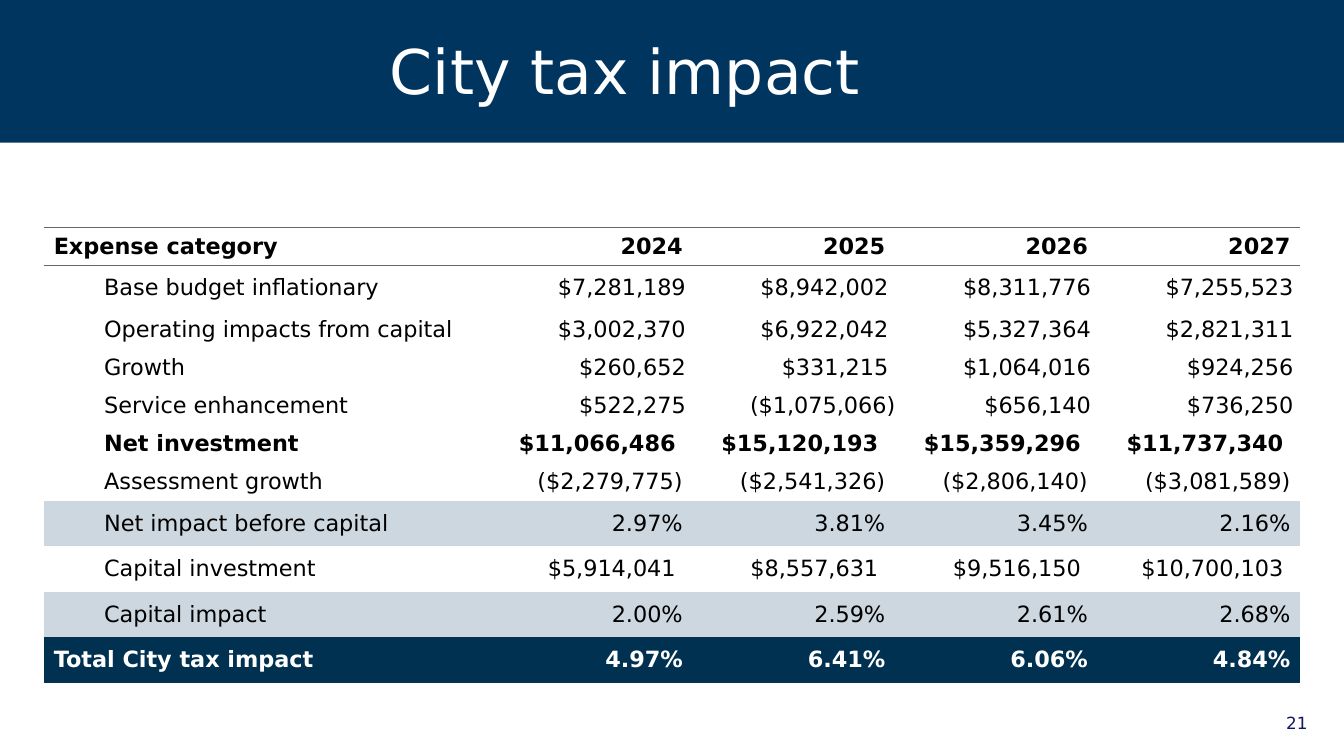
from lxml.etree import SubElement
from pptx import Presentation
from pptx.dml.color import RGBColor
from pptx.enum.shapes import MSO_SHAPE as Shape
from pptx.enum.text import MSO_ANCHOR as Anchor, PP_ALIGN as Align
from pptx.oxml.ns import qn
from pptx.util import Pt

NO_GRID_STYLE = "{2D5ABB26-0587-4C30-8999-92F81FD0307C}"
NAVY, TOTAL_NAVY, BAND = "00355F", "003150", "CCD7DF"
WHITE, BLACK, RULE, NUMBER_BLUE = "FFFFFF", "000000", "666666", "11175E"
INSET = 7.2
BRACKET_GAP = 5  # keeps amounts clear of the closing bracket of negatives

# Row kind: height, bold, fill, text colour, label indent, side inset, rules
KINDS = {
    "header": (27, True, None, BLACK, 0, INSET, {"T": RULE, "B": RULE}),
    "first": (32.4, False, None, BLACK, 36, 0, {}),
    "item": (27.2, False, None, BLACK, 36, 0, {}),
    "net": (27.2, True, None, BLACK, 36, INSET, {}),
    "growth": (27.2, False, None, BLACK, 36, INSET, {}),
    "capital": (32.4, False, None, BLACK, 36, INSET, {}),
    "impact": (32.4, False, BAND, BLACK, 36, INSET, {}),
    "total": (32.4, True, TOTAL_NAVY, WHITE, 0, INSET, {"B": NAVY}),
}

ROWS = [
    ("header", "Expense category", "2024", "2025", "2026", "2027"),
    ("first", "Base budget inflationary",
     "$7,281,189", "$8,942,002", "$8,311,776", "$7,255,523"),
    ("item", "Operating impacts from capital",
     "$3,002,370", "$6,922,042", "$5,327,364", "$2,821,311"),
    ("item", "Growth", "$260,652", "$331,215", "$1,064,016", "$924,256"),
    ("item", "Service enhancement",
     "$522,275", "($1,075,066)", "$656,140", "$736,250"),
    ("net", "Net investment",
     "$11,066,486", "$15,120,193", "$15,359,296", "$11,737,340"),
    ("growth", "Assessment growth",
     "($2,279,775)", "($2,541,326)", "($2,806,140)", "($3,081,589)"),
    ("impact", "Net impact before capital", "2.97%", "3.81%", "3.45%", "2.16%"),
    ("capital", "Capital investment",
     "$5,914,041", "$8,557,631", "$9,516,150", "$10,700,103"),
    ("impact", "Capital impact", "2.00%", "2.59%", "2.61%", "2.68%"),
    ("total", "Total City tax impact", "4.97%", "6.41%", "6.06%", "4.84%"),
]


def color(value):
    return RGBColor.from_string(value)


class Builder:
    font = "DejaVu Sans"

    def __init__(self, slide):
        self.s = slide

    def fill_text(self, tf, text, size, ink, bold=False, align=Align.LEFT):
        tf.text = text
        p = tf.paragraphs[0]
        p.alignment = align
        font = p.runs[0].font
        font.name, font.size, font.bold = self.font, Pt(size), bold
        font.color.rgb = color(ink)
        return p

    def bar(self, x, y, w, h, fill):
        sp = self.s.shapes.add_shape(Shape.RECTANGLE, Pt(x), Pt(y), Pt(w), Pt(h))
        sp.shadow.inherit = False
        sp.fill.solid()
        sp.fill.fore_color.rgb = color(fill)
        sp.line.fill.background()

    def text(self, x, y, w, h, text, size, ink, align=Align.LEFT,
             anchor=Anchor.TOP, spacing=1.0):
        tf = self.s.shapes.add_textbox(Pt(x), Pt(y), Pt(w), Pt(h)).text_frame
        tf.word_wrap = True
        tf.vertical_anchor = anchor
        self.fill_text(tf, text, size, ink, align=align).line_spacing = spacing

    def border(self, cell, side, ink):
        ln = SubElement(cell._tc.get_or_add_tcPr(), qn("a:ln" + side), w=str(Pt(0.75)))
        solid = SubElement(ln, qn("a:solidFill"))
        SubElement(solid, qn("a:srgbClr"), val=ink)

    def cell(self, cell, text, kind, is_label):
        _, bold, fill, ink, indent, inset, rules = KINDS[kind]
        align = Align.LEFT if is_label else Align.RIGHT
        p = self.fill_text(cell.text_frame, text, 16, ink, bold, align)
        cell.vertical_anchor = Anchor.MIDDLE
        cell.margin_top = cell.margin_bottom = 0
        if is_label:
            cell.margin_left = cell.margin_right = Pt(INSET)
            if indent:
                p.level = 1
                p._p.get_or_add_pPr().set("marL", str(Pt(indent)))
        else:
            gap = BRACKET_GAP if text.startswith("$") else 0
            cell.margin_left, cell.margin_right = Pt(inset), Pt(inset + gap)
        # Borders come before the fill in the cell properties
        for side, rule in rules.items():
            self.border(cell, side, rule)
        if fill:
            cell.fill.solid()
            cell.fill.fore_color.rgb = color(fill)
        else:
            cell.fill.background()

    def table(self, x, y, widths, rows):
        heights = [KINDS[row[0]][0] for row in rows]
        table = self.s.shapes.add_table(
            len(rows), len(widths), Pt(x), Pt(y),
            Pt(sum(widths)), Pt(sum(heights))).table
        table.first_row = table.horz_banding = False
        table._tbl.tblPr.find(qn("a:tableStyleId")).text = NO_GRID_STYLE
        for column, width in zip(table.columns, widths):
            column.width = Pt(width)
        for row, height, (kind, *values) in zip(table.rows, heights, rows):
            row.height = Pt(height)
            for i, (cell, value) in enumerate(zip(row.cells, values)):
                self.cell(cell, value, kind, is_label=i == 0)


def main():
    prs = Presentation()
    prs.slide_width, prs.slide_height = Pt(960), Pt(540)
    b = Builder(prs.slides.add_slide(prs.slide_layouts[6]))

    # Title banner
    b.bar(0, 0, 960, 102, NAVY)
    b.text(271.5, 21.6, 640, 63.4, "City tax impact", 44, WHITE,
           anchor=Anchor.MIDDLE, spacing=0.9)

    # Tax table
    b.table(31.2, 162.5, [319] + [144.7] * 4, ROWS)

    # Slide number
    b.text(887.8, 505.4, 53.3, 28.8, "21", 12, NUMBER_BLUE, align=Align.RIGHT)

    prs.save("out.pptx")


if __name__ == "__main__":
    main()
